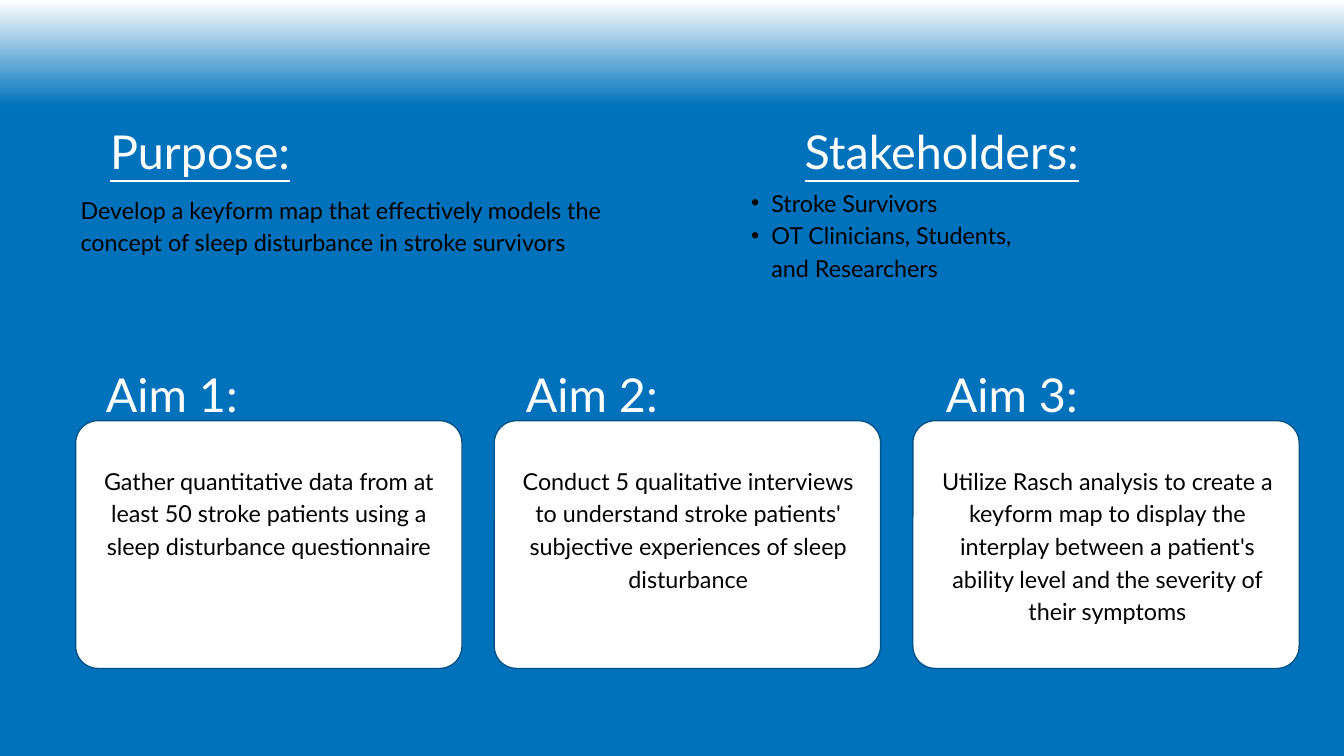
from dataclasses import dataclass

from lxml import etree
from pptx import Presentation
from pptx import util as u
from pptx.dml.color import RGBColor
from pptx.enum import shapes, text
from pptx.oxml import ns

SCALE = 9525


def px(n):
    return u.Emu(n * SCALE)


@dataclass(frozen=True)
class Theme:
    font: str = "Lato"
    blue: str = "0072BC"
    edge: str = "005288"
    white: str = "FFFFFF"
    black: str = "000000"
    head: int = 50
    body: int = 25
    lead: float = 1.4


class Deck:
    def __init__(self, theme):
        self.theme = theme
        self.file = Presentation()
        self.file.slide_width, self.file.slide_height = px(1920), px(1080)
        self.slide = self.file.slides.add_slide(self.file.slide_layouts[6])

    def fade(self, stop):
        fill = self.slide.background.fill
        fill.gradient()
        fill.gradient_angle = 270
        tones = (0, self.theme.white), (stop, self.theme.blue)
        for mark, (place, tone) in zip(fill.gradient_stops, tones):
            mark.position = place
            mark.color.rgb = RGBColor.from_string(tone)

    def card(self, x, y, w, h):
        kind = shapes.MSO_SHAPE.ROUNDED_RECTANGLE
        card = self.slide.shapes.add_shape(kind, px(x), px(y), px(w), px(h))
        card.adjustments[0] = 0.09
        card.shadow.inherit = False
        card.fill.solid()
        card.fill.fore_color.rgb = RGBColor.from_string(self.theme.white)
        card.line.color.rgb = RGBColor.from_string(self.theme.edge)
        card.line.width = u.Pt(1.5)

    def label(self, words, x, y, w, h, size, tone, mid=True, line=False):
        box = self.slide.shapes.add_textbox(px(x), px(y), px(w), px(h))
        frame = box.text_frame
        frame.margin_left = frame.margin_right = 0
        frame.margin_top = frame.margin_bottom = 0
        frame.word_wrap = True
        frame.text = words
        for para in frame.paragraphs:
            para.alignment = text.PP_ALIGN.CENTER if mid else text.PP_ALIGN.LEFT
            para.line_spacing = u.Pt(size * self.theme.lead)
            for run in para.runs:
                run.font.name = self.theme.font
                run.font.size = u.Pt(size)
                run.font.color.rgb = RGBColor.from_string(tone)
                if line:
                    run.font.underline = True
        return frame

    def head(self, words, x, y, w, line=False):
        self.label(words, x, y, w, 91, self.theme.head, self.theme.white, line=line)

    def body(self, words, x, y, w, h, mid=True):
        return self.label(words, x, y, w, h, self.theme.body, self.theme.black, mid)

    def list(self, items, x, y, w, h):
        frame = self.body("\n".join(items), x, y, w, h, mid=False)
        for para in frame.paragraphs:
            para.level = 1
            props = para._p.get_or_add_pPr()
            props.set("marL", str(px(57)))
            props.set("indent", str(px(-29)))
            font = etree.SubElement(props, ns.qn("a:buFont"))
            font.set("typeface", "Arial")
            mark = etree.SubElement(props, ns.qn("a:buChar"))
            mark.set("char", "•")


AIMS = (
    "Gather quantitative data from at least 50 stroke patients using a "
    "sleep disturbance questionnaire",
    "Conduct 5 qualitative interviews to understand stroke patients' "
    "subjective experiences of sleep disturbance",
    "Utilize Rasch analysis to create a keyform map to display the interplay "
    "between a patient's ability level and the severity of their symptoms",
)


def main():
    deck = Deck(Theme())
    deck.fade(0.14)

    deck.head("Purpose:", 108, 162, 356, line=True)
    deck.body(
        "Develop a keyform map that effectively models the concept of "
        "sleep disturbance in stroke survivors",
        115, 273, 779, 136, mid=False,
    )
    deck.head("Stakeholders:", 1083, 162, 525, line=True)
    deck.list(
        ("Stroke Survivors", "OT Clinicians, Students, and Researchers"),
        1045, 263, 430, 182,
    )

    for i, aim in enumerate(AIMS):
        deck.card(108 + 598 * i, 601, 552, 354)
        deck.head(f"Aim {i + 1}:", 131 + 600 * i, 509, 229)
        deck.body(aim, 136 + 599 * i, 660, 496, 229)

    deck.file.save("out.pptx")


if __name__ == "__main__":
    main()
